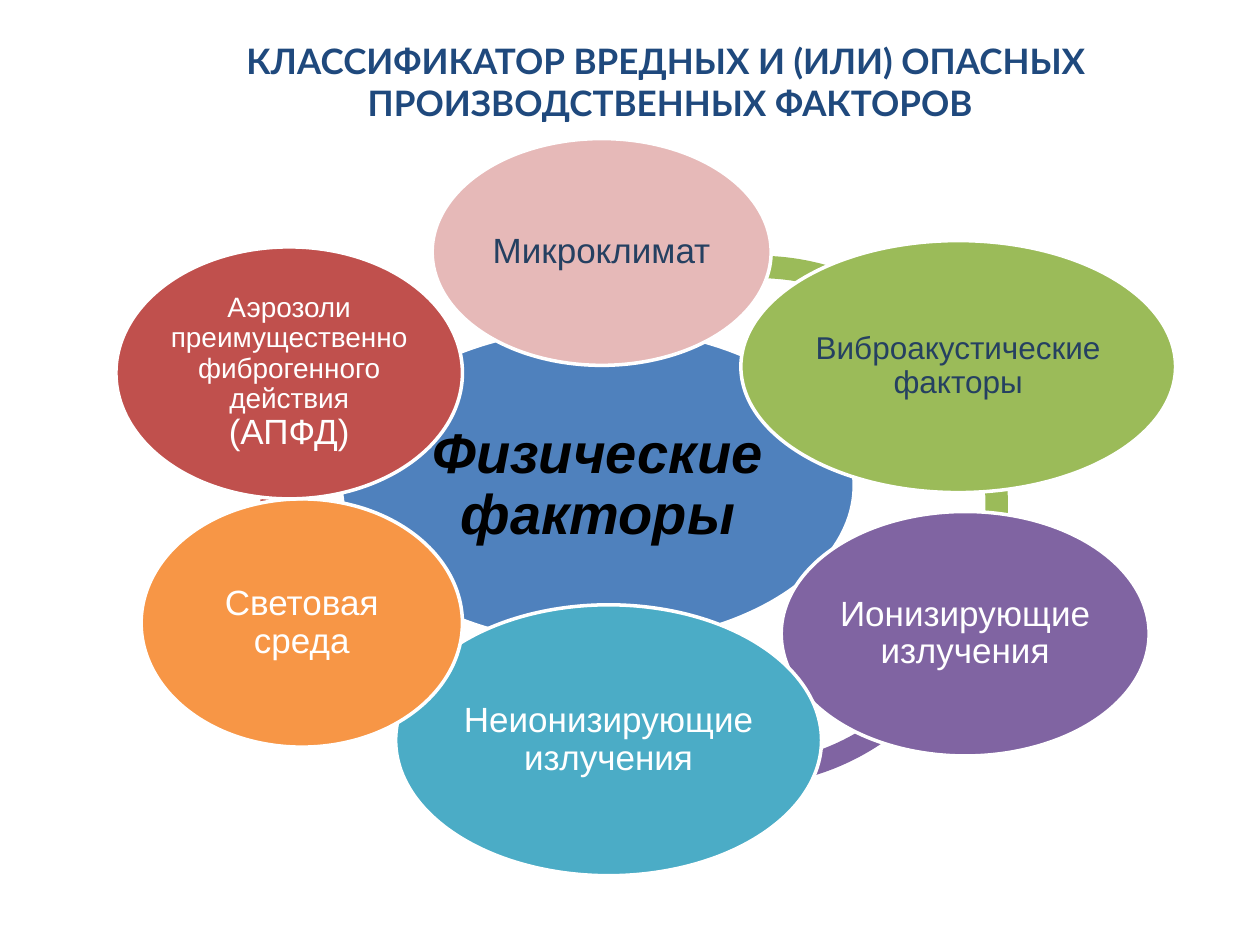
import pptx
import pptx.util
from pptx.dml.color import RGBColor
from pptx.enum.shapes import MSO_SHAPE
from pptx.enum.text import MSO_ANCHOR, PP_ALIGN

WHITE = RGBColor(0xFF, 0xFF, 0xFF)
BLACK = RGBColor(0x00, 0x00, 0x00)
NAVY = RGBColor(0x1F, 0x49, 0x7D)
DARK_BLUE = RGBColor(0x25, 0x40, 0x61)
BLUE = RGBColor(0x4F, 0x81, 0xBD)
PINK = RGBColor(0xE6, 0xB9, 0xB8)
RED = RGBColor(0xC0, 0x50, 0x4D)
GREEN = RGBColor(0x9B, 0xBB, 0x59)
PURPLE = RGBColor(0x80, 0x64, 0xA2)
TEAL = RGBColor(0x4B, 0xAC, 0xC6)
ORANGE = RGBColor(0xF7, 0x96, 0x46)

SLIDE_WIDTH = pptx.util.Inches(10)
SLIDE_HEIGHT = pptx.util.Inches(7.5)
COLUMN = SLIDE_WIDTH / 100
ROW = SLIDE_HEIGHT / 75
RING_SIZE = 39.6
RING_THICKNESS = 0.045
ADJUSTMENT_PER_DEGREE = 0.6

TITLE_BOX = (8.3, 0.6, 89.8, 11.8)
TITLE_LINES = ("КЛАССИФИКАТОР ВРЕДНЫХ И (ИЛИ) ОПАСНЫХ ", "ПРОИЗВОДСТВЕННЫХ ФАКТОРОВ")

ARCS = [
    (20.6, 18.2, 123.26, 175.25, RED),
    (20.3, 18.9, 87.92, 124.77, ORANGE),
    (21.4, 20.9, 41.2, 91.99, TEAL),
    (39.1, 22.8, 14.23, 74.01, PURPLE),
    (40.4, 20.3, 195.12, 19.11, GREEN),
    (38.3, 16.6, 142.5, 202.8, RED),
]

HUB_BOX = (27.1, 26, 40.7, 25.1)
FACTORS = [
    ((34.3, 11, 26.9, 18), PINK, DARK_BLUE, [("Микроклимат", 20)]),
    ((58.8, 19.1, 34.5, 20), GREEN, DARK_BLUE, [("Виброакустические факторы", 18)]),
    ((62, 40.6, 29.2, 19.4), PURPLE, WHITE, [("Ионизирующие излучения", 20)]),
    ((31.4, 48, 33.8, 21.5), TEAL, WHITE, [("Неионизирующие излучения", 20)]),
    ((11.2, 39.6, 25.5, 19.7), ORANGE, WHITE, [("Световая среда", 20)]),
    ((9.2, 19.6, 27.5, 20), RED, WHITE,
     [("Аэрозоли преимущественно фиброгенного действия ", 16), ("(АПФД)", 20)]),
]


def place(box):
    left, top, width, height = box
    return [round(length) for length in (left * COLUMN, top * ROW, width * COLUMN, height * ROW)]


def prepare_text(shape, inset):
    frame = shape.text_frame
    frame.word_wrap = True
    frame.vertical_anchor = MSO_ANCHOR.MIDDLE
    frame.margin_left = frame.margin_right = pptx.util.Inches(inset)
    frame.margin_top = frame.margin_bottom = pptx.util.Inches(inset)
    para = frame.paragraphs[0]
    para.alignment = PP_ALIGN.CENTER
    return para


def add_span(para, text, size, font, color, bold=False, italic=False):
    span = para.add_run()
    span.text = text
    span.font.size = pptx.util.Pt(size)
    span.font.name = font
    span.font.color.rgb = color
    span.font.bold = bold
    span.font.italic = italic


def add_title(page, box):
    para = prepare_text(page.shapes.add_textbox(*place(box)), 0)
    for index, line in enumerate(TITLE_LINES):
        if index:
            para.add_line_break()
        add_span(para, line, 20, "Lato", NAVY, bold=True)


def add_filled_shape(page, kind, box, fill):
    shape = page.shapes.add_shape(kind, *place(box))
    shape.shadow.inherit = False
    shape.fill.solid()
    shape.fill.fore_color.rgb = fill
    return shape


def add_arc(page, box, start, end, fill):
    arc = add_filled_shape(page, MSO_SHAPE.BLOCK_ARC, box, fill)
    arc.line.fill.background()
    arc.adjustments[0] = start * ADJUSTMENT_PER_DEGREE
    arc.adjustments[1] = end * ADJUSTMENT_PER_DEGREE
    arc.adjustments[2] = RING_THICKNESS


def add_bubble(page, box, fill, color, spans, inset=0.02, emphasis=False):
    bubble = add_filled_shape(page, MSO_SHAPE.OVAL, box, fill)
    bubble.line.color.rgb = WHITE
    bubble.line.width = pptx.util.Pt(2)
    para = prepare_text(bubble, inset)
    para.line_spacing = 0.9
    for text, size in spans:
        add_span(para, text, size, "Arial", color, emphasis, emphasis)


def main():
    deck = pptx.Presentation()
    deck.slide_width = SLIDE_WIDTH
    deck.slide_height = SLIDE_HEIGHT
    page = deck.slides.add_slide(deck.slide_layouts[6])
    add_title(page, TITLE_BOX)
    for left, top, start, end, fill in ARCS:
        add_arc(page, (left, top, RING_SIZE, RING_SIZE), start, end, fill)
    add_bubble(page, HUB_BOX, BLUE, BLACK, [("Физические факторы", 32)], 0.04, True)
    for box, fill, color, spans in FACTORS:
        add_bubble(page, box, fill, color, spans)
    deck.save("out.pptx")


if __name__ == "__main__":
    main()
